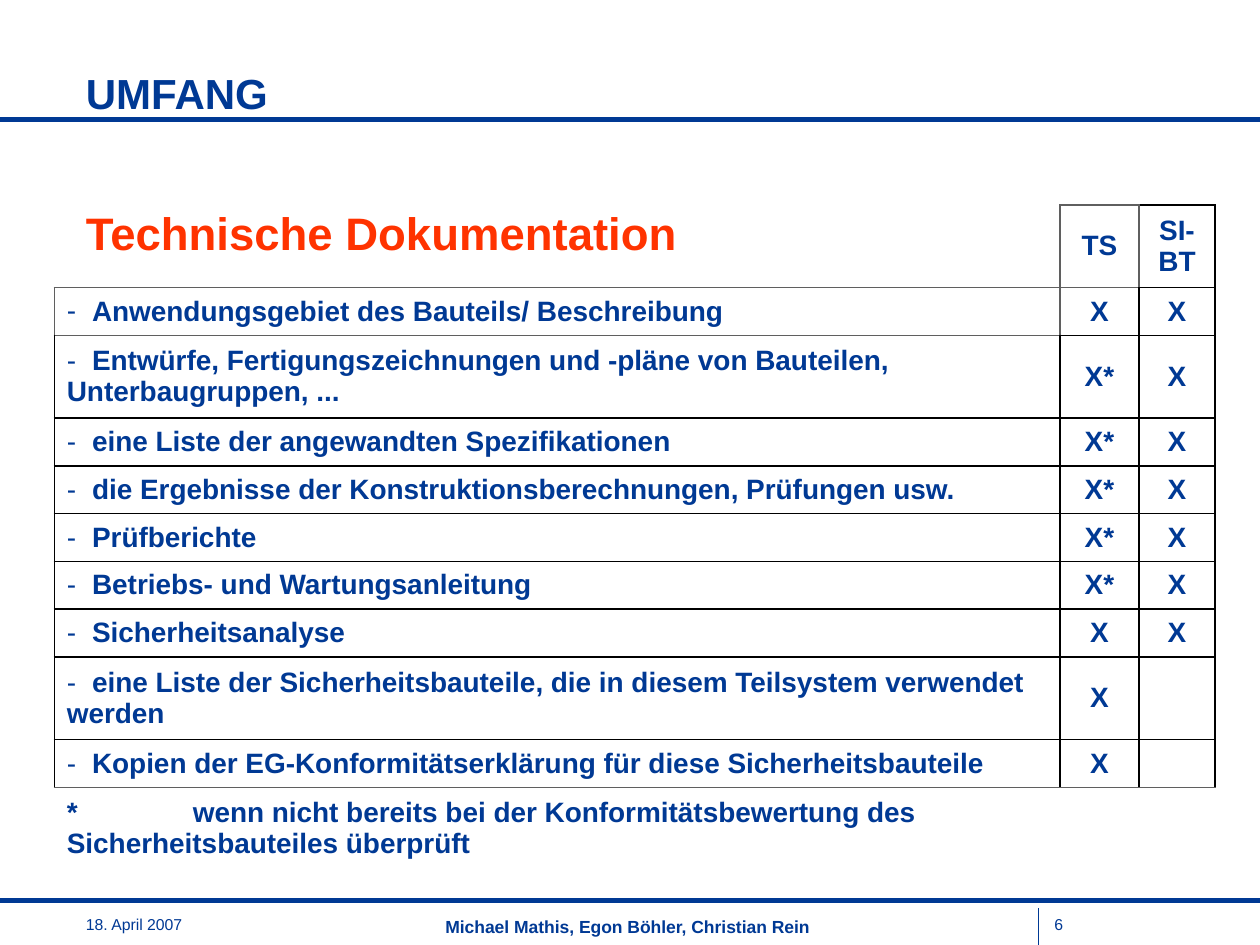
from dataclasses import dataclass

from lxml.etree import SubElement
from pptx import Presentation
from pptx.dml.color import RGBColor
from pptx.enum.shapes import MSO_CONNECTOR
from pptx.enum.text import MSO_ANCHOR, PP_ALIGN
from pptx.oxml.ns import qn
from pptx.util import Pt

COLORS = {"blue": "003994", "red": "FF3300", "black": "000000", "gray": "5F5F5F"}
FONT = "Arial"
TABLE_SIZE = 16


@dataclass
class Rule:
    x1: float
    y1: float
    x2: float
    y2: float
    weight: float


@dataclass
class Label:
    text: str
    left: float
    top: float
    width: float
    height: float
    size: float
    bold: bool = False
    color: str = "blue"
    align: PP_ALIGN = PP_ALIGN.LEFT
    anchor: MSO_ANCHOR = MSO_ANCHOR.TOP


@dataclass
class Requirement:
    text: str
    subsystem: str
    component: str
    height: float = 27.3
    bullet: bool = True
    tab: float = 14.4


TALL = 47.3
RULES = [
    Rule(593.5, 519, 593.5, 540, 1),
    Rule(0, 68.5, 720, 68.5, 3),
    Rule(0, 514.5, 720, 514.5, 3),
]
LABELS = [
    Label("6", 595.5, 519, 72, 18, 9),
    Label("18. April 2007", 42, 519, 108, 18, 9),
    Label("Michael Mathis, Egon Böhler, Christian Rein", 133.5, 520, 450, 19, 10,
          bold=True, align=PP_ALIGN.CENTER),
    Label("UMFANG", 42, 32, 510, 42, 24, bold=True, anchor=MSO_ANCHOR.MIDDLE),
    Label("Technische Dokumentation", 42, 112, 510, 42, 26, bold=True, color="red",
          anchor=MSO_ANCHOR.MIDDLE),
]
REQUIREMENTS = [
    Requirement("", "TS", "SI-BT", TALL, bullet=False),
    Requirement("Anwendungsgebiet des Bauteils/ Beschreibung", "X", "X"),
    Requirement("Entwürfe, Fertigungszeichnungen und -pläne von Bauteilen, "
                "Unterbaugruppen, ...", "X*", "X", TALL),
    Requirement("eine Liste der angewandten Spezifikationen", "X*", "X"),
    Requirement("die Ergebnisse der Konstruktionsberechnungen, Prüfungen usw.", "X*", "X"),
    Requirement("Prüfberichte", "X*", "X"),
    Requirement("Betriebs- und Wartungsanleitung", "X*", "X"),
    Requirement("Sicherheitsanalyse", "X", "X"),
    Requirement("eine Liste der Sicherheitsbauteile, die in diesem Teilsystem verwendet "
                "werden", "X", "", TALL),
    Requirement("Kopien der EG-Konformitätserklärung für diese Sicherheitsbauteile", "X", ""),
    Requirement("*\twenn nicht bereits bei der Konformitätsbewertung des "
                "Sicherheitsbauteiles überprüft", "", "", TALL, bullet=False, tab=72),
]
COLUMN_WIDTHS = [574.6, 45.4, 43.2]
FOOTNOTE_ROW = len(REQUIREMENTS) - 1
GRAY_HORIZONTAL = {(0, 1), (1, 0), (1, 1), (2, 0)}
GRAY_VERTICAL = {(0, 1), (0, 2), (1, 0), (1, 1)}


def rgb(name: str) -> RGBColor:
    return RGBColor.from_string(COLORS[name])


def format_runs(paragraph, size: float, bold: bool, color: str) -> None:
    for run in paragraph.runs:
        run.font.name = FONT
        run.font.size = Pt(size)
        run.font.bold = bold
        run.font.color.rgb = rgb(color)


def draw_rule(slide, rule: Rule) -> None:
    connector = slide.shapes.add_connector(
        MSO_CONNECTOR.STRAIGHT, Pt(rule.x1), Pt(rule.y1), Pt(rule.x2), Pt(rule.y2))
    connector.line.color.rgb = rgb("blue")
    connector.line.width = Pt(rule.weight)
    SubElement(connector._element.spPr, qn("a:effectLst"))


def draw_label(slide, label: Label) -> None:
    box = slide.shapes.add_textbox(
        Pt(label.left), Pt(label.top), Pt(label.width), Pt(label.height))
    frame = box.text_frame
    frame.word_wrap = True
    frame.vertical_anchor = label.anchor
    frame.text = label.text
    paragraph = frame.paragraphs[0]
    paragraph.alignment = label.align
    format_runs(paragraph, label.size, label.bold, label.color)


def horizontal_color(line: int, column: int) -> str | None:
    if (line, column) == (0, 0) or line > FOOTNOTE_ROW:
        return None
    gray = line == FOOTNOTE_ROW or (line, column) in GRAY_HORIZONTAL
    return "gray" if gray else "black"


def vertical_color(row: int, line: int) -> str | None:
    if (row, line) == (0, 0) or row == FOOTNOTE_ROW:
        return None
    return "gray" if (row, line) in GRAY_VERTICAL else "black"


def set_borders(cell, row: int, column: int) -> None:
    sides = {
        "a:lnL": vertical_color(row, column),
        "a:lnR": vertical_color(row, column + 1),
        "a:lnT": horizontal_color(row, column),
        "a:lnB": horizontal_color(row + 1, column),
    }
    properties = cell._tc.get_or_add_tcPr()
    for tag, color in sides.items():
        border = SubElement(properties, qn(tag), w=str(Pt(1)))
        if color:
            fill = SubElement(border, qn("a:solidFill"))
            SubElement(fill, qn("a:srgbClr"), val=COLORS[color])
        else:
            SubElement(border, qn("a:noFill"))


def set_list_layout(paragraph, requirement: Requirement) -> None:
    properties = paragraph._p.get_or_add_pPr()
    if requirement.bullet:
        properties.set("marL", "0")
        properties.set("indent", "0")
        SubElement(properties, qn("a:buFont"), typeface=FONT)
        SubElement(properties, qn("a:buChar"), char="-")
    tabs = SubElement(properties, qn("a:tabLst"))
    SubElement(tabs, qn("a:tab"), pos=str(Pt(requirement.tab)), algn="l")


def fill_cell(cell, text: str, row: int, column: int) -> None:
    set_borders(cell, row, column)
    cell.fill.background()
    cell.vertical_anchor = MSO_ANCHOR.MIDDLE
    cell.text_frame.text = text
    paragraph = cell.text_frame.paragraphs[0]
    if column:
        paragraph.alignment = PP_ALIGN.CENTER
    elif text:
        set_list_layout(paragraph, REQUIREMENTS[row])
    format_runs(paragraph, TABLE_SIZE, True, "blue")
    if not text:
        SubElement(paragraph._p, qn("a:endParaRPr"), sz=str(TABLE_SIZE * 100))


def draw_requirements(slide) -> None:
    total_height = sum(requirement.height for requirement in REQUIREMENTS)
    table = slide.shapes.add_table(
        len(REQUIREMENTS), len(COLUMN_WIDTHS), Pt(31), Pt(117),
        Pt(sum(COLUMN_WIDTHS)), Pt(total_height)).table
    table.first_row = False
    table.horz_banding = False
    for column, width in enumerate(COLUMN_WIDTHS):
        table.columns[column].width = Pt(width)
    for row, requirement in enumerate(REQUIREMENTS):
        table.rows[row].height = Pt(requirement.height)
        description = "\t" + requirement.text if requirement.bullet else requirement.text
        entries = (description, requirement.subsystem, requirement.component)
        for column, entry in enumerate(entries):
            fill_cell(table.cell(row, column), entry, row, column)


def main() -> None:
    presentation = Presentation()
    presentation.slide_width = Pt(720)
    presentation.slide_height = Pt(540)
    slide = presentation.slides.add_slide(presentation.slide_layouts[6])
    for rule in RULES:
        draw_rule(slide, rule)
    draw_requirements(slide)
    for label in LABELS:
        draw_label(slide, label)
    presentation.save("out.pptx")


if __name__ == "__main__":
    main()
